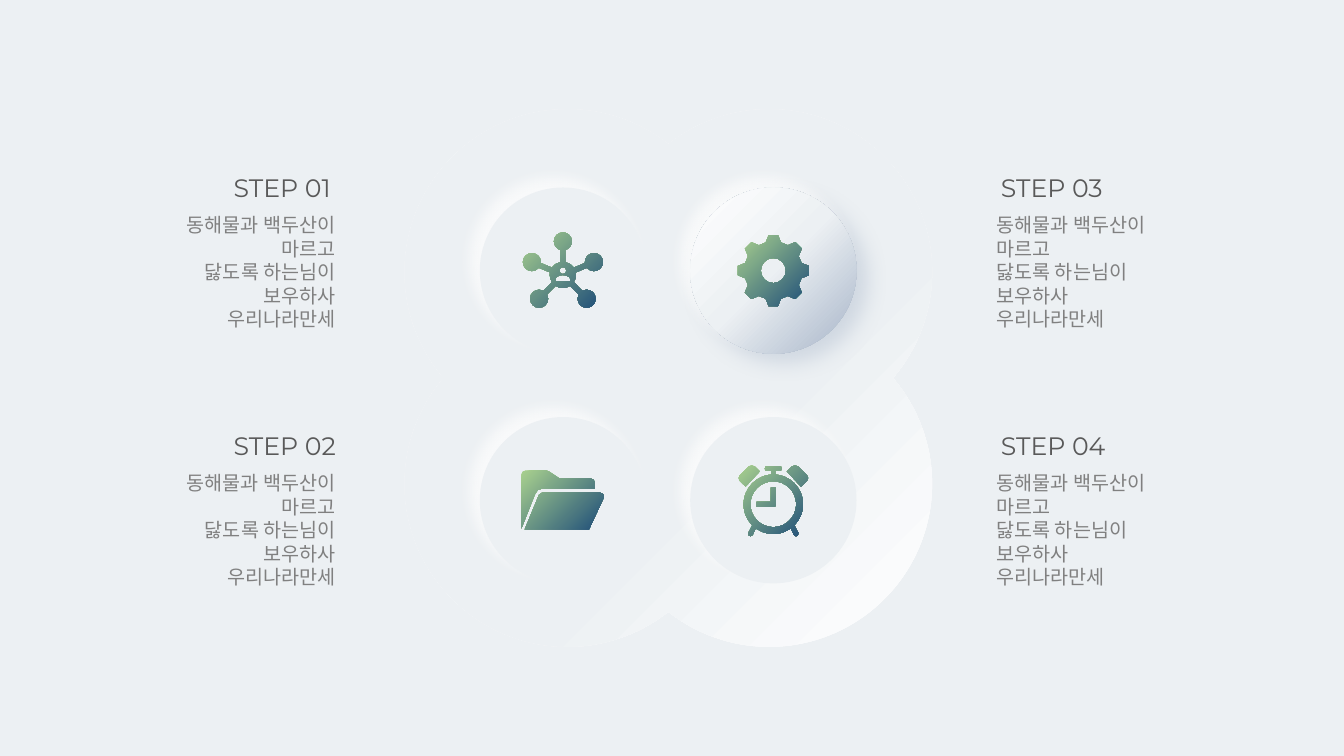
from math import cos, radians, sin, tan

from lxml import etree
from pptx import Presentation
from pptx.dml.color import RGBColor
from pptx.enum.shapes import MSO_SHAPE
from pptx.enum.text import PP_ALIGN
from pptx.oxml.ns import qn
from pptx.util import Pt

OVAL = MSO_SHAPE.OVAL
LEFT, RIGHT = PP_ALIGN.LEFT, PP_ALIGN.RIGHT
SURFACE = RGBColor(0xEC, 0xF0, 0xF3)
WHITE = RGBColor(0xFF, 0xFF, 0xFF)
STEEL = RGBColor(0xA6, 0xB4, 0xC8)
GREEN = RGBColor(0xA9, 0xD1, 0x8E)
NAVY = RGBColor(0x1F, 0x4E, 0x79)
TITLE_GREY = RGBColor(0x59, 0x59, 0x59)
BODY_GREY = RGBColor(0x80, 0x80, 0x80)

PANEL_FILL = [(61, SURFACE), (100, WHITE)]
ICON_FILL = [(0, GREEN), (100, NAVY)]
KNOB_FILL = [(0, WHITE), (50, SURFACE), (100, STEEL)]
FLAT_FILL = [(0, SURFACE)]
# Shadows: colour, opacity in percent, blur, distance, direction in degrees
HIGHLIGHT = (WHITE, 75, 10, 10, 225)
SHADE = (STEEL, 40, 15, 10, 40)
DISC_SIZE = 118.8


def arc(x, y, radius, start=0, end=360):
    """A start point, then Bezier curves of three points each, split at the axes.

    Angles are in degrees, clockwise from the right.
    """
    stops = [start] + [a for a in range(-90, 901, 90) if start < a < end] + [end]
    parts = [(x + radius * cos(radians(start)), y + radius * sin(radians(start)))]
    for first, last in zip(stops, stops[1:]):
        reach = 4 / 3 * tan(radians(last - first) / 4)
        curve = []
        for angle, pull in [(first, reach), (last, -reach), (last, 0)]:
            c, s = cos(radians(angle)), sin(radians(angle))
            curve.append((x + radius * (c - pull * s), y + radius * (s + pull * c)))
        parts.append(curve)
    return parts


def paint(shape, stops, radial=True, shadow=None):
    """Fill a shape with one colour or a gradient, without line, and set its shadow."""
    shape.line.fill.background()
    shape.shadow.inherit = False
    properties = shape._element.spPr
    if len(stops) == 1:
        shape.fill.solid()
        shape.fill.fore_color.rgb = stops[0][1]
    else:
        shape.fill.gradient()
        gradient = properties.find(qn("a:gradFill"))
        for child in list(gradient):
            gradient.remove(child)
        stop_list = etree.SubElement(gradient, qn("a:gsLst"))
        for position, color in stops:
            stop = etree.SubElement(stop_list, qn("a:gs"), pos=str(position * 1000))
            etree.SubElement(stop, qn("a:srgbClr"), val=str(color))
        if radial:
            circle = etree.SubElement(gradient, qn("a:path"), path="circle")
            etree.SubElement(circle, qn("a:fillToRect"), r="100000", b="100000")
        else:
            etree.SubElement(gradient, qn("a:lin"), ang=str(45 * 60000), scaled="0")
    if shadow:
        color, opacity, blur, distance, direction = shadow
        outer = etree.SubElement(
            properties.find(qn("a:effectLst")), qn("a:outerShdw"),
            blurRad=str(Pt(blur)), dist=str(Pt(distance)),
            dir=str(direction * 60000), algn="ctr", rotWithShape="0")
        color_element = etree.SubElement(outer, qn("a:srgbClr"), val=str(color))
        etree.SubElement(color_element, qn("a:alpha"), val=str(opacity * 1000))


presentation = Presentation()
presentation.slide_width, presentation.slide_height = Pt(960), Pt(540)
slide = presentation.slides.add_slide(presentation.slide_layouts[6])
slide.background.fill.solid()
slide.background.fill.fore_color.rgb = SURFACE

# Outlines are lists of contours, in points around their centre.
# A contour holds points (tuples) and curves (lists of three points).
# Panel: the joint outline of four overlapping circles
panel = [arc(72, 75.6, 116.4, -40.5, 128.2) + arc(-72, 75.6, 116.4, 51.8, 220.5)
         + arc(-72, -75.6, 116.4, 139.5, 308.2) + arc(72, -75.6, 116.4, 231.8, 400.5)]

# Network: a hub with a person, and five nodes on spokes
hub_y = 3.1
spoke_angles = [-90, -22.5, 45, 135, 202.5]
network_edge = []
for angle, next_angle in zip(spoke_angles, spoke_angles[1:] + [270]):
    node_x = 24 * cos(radians(angle))
    node_y = hub_y + 24 * sin(radians(angle))
    network_edge += arc(node_x, node_y, 6.4, angle + 196.3, angle + 523.7)
    network_edge += arc(0, hub_y, 9.3, angle + 11.2, next_angle - 11.2)
person_body = [(-5.3, 7.6), (5.3, 7.6), (5.3, 5.8), (4.7, 4.7), (2.5, 3.4),
               (0, 3.1), (-2.5, 3.4), (-4.7, 4.7), (-5.3, 5.8)]
network = [network_edge, arc(0, 0, 2.6), person_body]

folder = [
    [(-14.8, -5.4), (26.5, -5.4), (28.6, -4.4), (29.3, -2.6), (28.8, -1),
     (18.6, 20.8), (-27.2, 20.8), (-17, -4)],
    [(-29.6, 20), (-29.6, -18.4), (-28.8, -20.4), (-26.5, -21.2), (-12.6, -21.4),
     (-10.4, -20.7), (-2.5, -15.5), (19.8, -15.5), (22, -14.5), (22.7, -12.4),
     (22.7, -8.3), (-14.8, -8.3), (-17.8, -7.3), (-19.8, -4.7)],
]

# Gear: eight teeth, each given by angle and radius
gear_edge = []
for tooth in range(8):
    for angle, radius in [(-15.2, 20.8), (-7.3, 25.6), (7.3, 25.6), (15.2, 20.8)]:
        turn = radians(45 * tooth + angle)
        gear_edge.append((radius * cos(turn), radius * sin(turn)))
gear = [gear_edge, arc(0, 0, 9)]

face_y = 2.9
clock = [
    arc(0, face_y, 21.2), arc(0, face_y, 16.4),
    [(-1.7, -9), (1.7, -9), (1.7, 4), (1, 4.7), (-11.9, 4.7), (-11.9, 1.2), (-1.7, 1.2)],
    [(-5.4, -24.1), (5.4, -24.1), (6.1, -22.6), (5.4, -21.1), (1.5, -21.1),
     (1.5, -18.3), (-1.5, -18.3), (-1.5, -21.1), (-5.4, -21.1), (-6.1, -22.6)],
]
bell = [(15.5, -24.8), (17.6, -24.1), (24.1, -17.6), (24.8, -15.8), (24.1, -14),
        (19.8, -9.7), (9.7, -20.5), (13.3, -24.1)]
foot = [(15, 18), (17.8, 23.4), (17.5, 25.2), (16.2, 25.7), (14.8, 24.8), (12.6, 20.1)]
for side in (-1, 1):
    clock += [[(side * x, y) for x, y in part] for part in (bell, foot)]

LEFT_X, RIGHT_X, TOP_Y, BOTTOM_Y = 402.1, 552.4, 193.3, 357.3
flat_disc = [(FLAT_FILL, HIGHLIGHT)]
knob = [(FLAT_FILL, SHADE), (KNOB_FILL, HIGHLIGHT)]
for center_x, center_y, discs, contours in [
    (477.4, 270, [], panel),
    (RIGHT_X, BOTTOM_Y, flat_disc, clock),
    (LEFT_X, TOP_Y, flat_disc, network),
    (LEFT_X, BOTTOM_Y, flat_disc, folder),
    (RIGHT_X, TOP_Y, knob, gear),
]:
    shapes = slide.shapes.add_group_shape().shapes if discs else slide.shapes
    for stops, shadow in discs:
        disc = shapes.add_shape(
            OVAL, Pt(center_x - DISC_SIZE / 2), Pt(center_y - DISC_SIZE / 2),
            Pt(DISC_SIZE), Pt(DISC_SIZE))
        paint(disc, stops, shadow=shadow)
    # The builder takes whole units, so it works in hundredths of a point.
    builder = None
    for contour in contours:
        flat = [point for part in contour
                for point in (part if isinstance(part, list) else [part])]
        points = [(100 * (center_x + x), 100 * (center_y + y)) for x, y in flat]
        if builder is None:
            builder = shapes.build_freeform(*points[0], scale=Pt(1) / 100)
        else:
            builder.move_to(*points[0])
        # Closing is left to the path, so that no extra point is drawn.
        builder.add_line_segments(points[1:], close=True)
    outline = builder.convert_to_shape()
    # Join the three lines that stand for a curve into one Bezier segment.
    segments = iter(list(outline._element.iter(qn("a:moveTo"), qn("a:lnTo"), qn("a:close"))))
    for contour in contours:
        for part in contour:
            segment = next(segments)
            if isinstance(part, list):
                segment.tag = qn("a:cubicBezTo")
                for line in (next(segments), next(segments)):
                    segment.append(line[0])
                    line.getparent().remove(line)
        while next(segments).tag != qn("a:close"):
            pass
    paint(outline, ICON_FILL if discs else PANEL_FILL, radial=not discs)

BODY = ["동해물과 백두산이 마르고", "닳도록 하는님이 보우하사", "우리나라만세"]
for number in range(1, 5):
    column, row = divmod(number - 1, 2)
    top = 119.5 + 184.3 * row
    title_left, body_left, alignment = [(159.8, 87, RIGHT), (707.8, 704.7, LEFT)][column]
    for left, box_top, width, height, lines, align, size, font_name, color in [
        (title_left, top, 90, 29, [f"STEP {number:02}"], LEFT, 18, "Montserrat", TITLE_GREY),
        (body_left, top + 29, 160, 58.3, BODY, alignment, 14, "Noto Sans CJK KR", BODY_GREY),
    ]:
        box = slide.shapes.add_textbox(Pt(left), Pt(box_top), Pt(width), Pt(height))
        frame = box.text_frame
        frame.word_wrap = True
        frame.text = "\n".join(lines)
        for paragraph in frame.paragraphs:
            paragraph.alignment = align
            paragraph.font.size = Pt(size)
            paragraph.font.name = font_name
            paragraph.font.color.rgb = color
            etree.SubElement(paragraph.font._element, qn("a:ea"), typeface=font_name)
            if lines is BODY:
                paragraph.line_spacing = Pt(16.8)

presentation.save("out.pptx")
